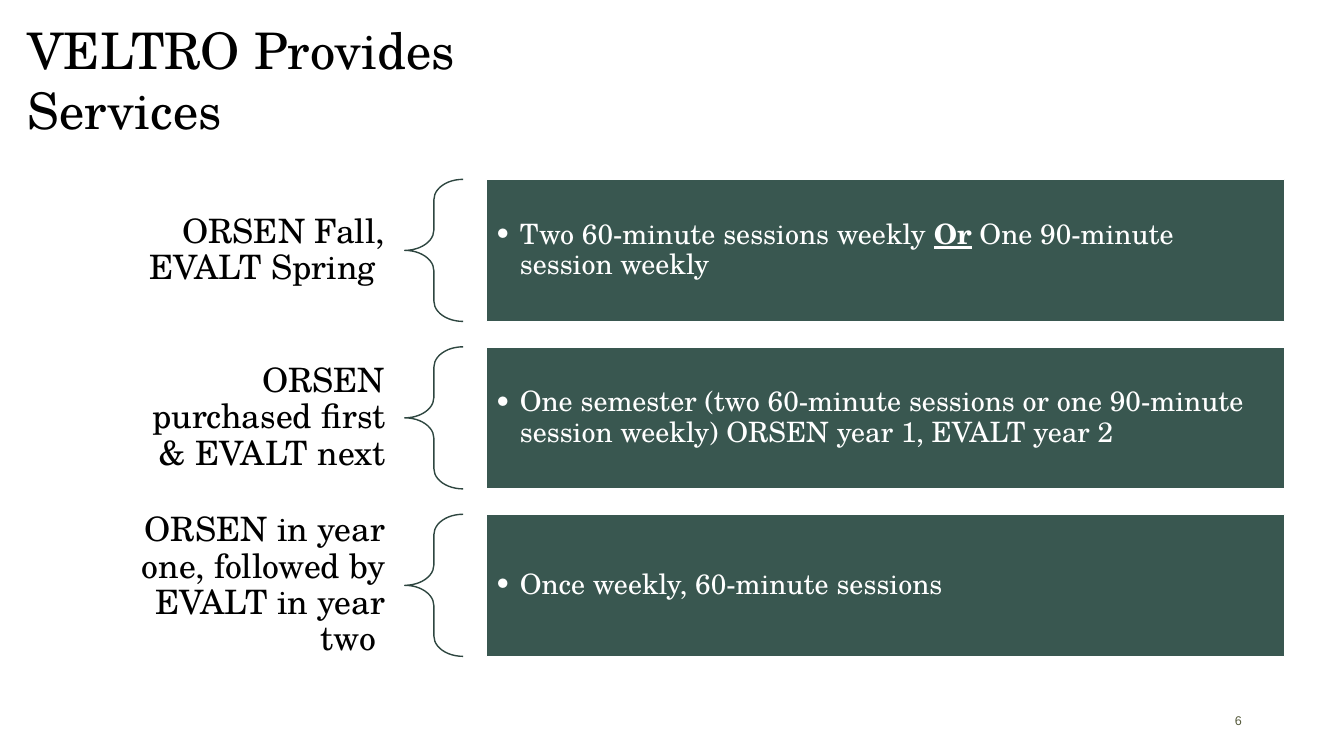
from dataclasses import dataclass

from lxml.etree import SubElement
from pptx import Presentation
from pptx.dml.color import RGBColor
from pptx.enum.shapes import MSO_SHAPE
from pptx.enum.text import MSO_ANCHOR, PP_ALIGN
from pptx.oxml.ns import qn
from pptx.util import Cm, Pt


@dataclass(frozen=True)
class Theme:
    font: str = "TeX Gyre Schola"
    number_font: str = "Arial"
    black: RGBColor = RGBColor(0x00, 0x00, 0x00)
    white: RGBColor = RGBColor(0xFF, 0xFF, 0xFF)
    panel: RGBColor = RGBColor(0x39, 0x57, 0x50)
    brace: RGBColor = RGBColor(0x2E, 0x46, 0x40)
    number: RGBColor = RGBColor(0x55, 0x5A, 0x3B)
    title_size: Pt = Pt(36)
    label_size: Pt = Pt(24)
    detail_size: Pt = Pt(20)
    number_size: Pt = Pt(9)


def format_runs(paragraph, size, color, font):
    for run in paragraph.runs:
        run.font.name = font
        run.font.size = size
        run.font.color.rgb = color


def add_text(slide, box, text, size, color, font, align=PP_ALIGN.LEFT, anchor=MSO_ANCHOR.TOP):
    shape = slide.shapes.add_textbox(*box)
    frame = shape.text_frame
    frame.word_wrap = True
    frame.vertical_anchor = anchor
    frame.text = text
    paragraph = frame.paragraphs[0]
    paragraph.alignment = align
    format_runs(paragraph, size, color, font)
    return frame


theme = Theme()
services = [
    ("ORSEN Fall, EVALT Spring ",
     ["Two 60-minute sessions weekly ", "Or", " One 90-minute session weekly"]),
    ("ORSEN purchased first & EVALT next",
     ["One semester (two 60-minute sessions or one 90-minute session weekly) "
      "ORSEN year 1, EVALT year 2"]),
    ("ORSEN in year one, followed by EVALT in year two ",
     ["Once weekly, 60-minute sessions "]),
]
first_top, row_step, row_height = Cm(4.52), Cm(4.22), Cm(3.58)

presentation = Presentation()
presentation.slide_width = Cm(33.87)
presentation.slide_height = Cm(19.05)
slide = presentation.slides.add_slide(presentation.slide_layouts[6])

add_text(slide, (Cm(0.44), Cm(0.35), Cm(13.77), Cm(3.33)), "VELTRO Provides Services",
         theme.title_size, theme.black, theme.font)

for row, (label, details) in enumerate(services):
    top = first_top + row * row_step

    label_frame = add_text(slide, (Cm(2.8), top, Cm(7.39), row_height), label,
                           theme.label_size, theme.black, theme.font,
                           PP_ALIGN.RIGHT, MSO_ANCHOR.MIDDLE)
    label_frame.margin_left = label_frame.margin_right = Cm(0.48)
    label_frame.margin_top = label_frame.margin_bottom = Cm(0.17)
    label_frame.paragraphs[0].line_spacing = 0.9

    brace = slide.shapes.add_shape(MSO_SHAPE.LEFT_BRACE, Cm(10.2), top, Cm(1.47), row_height)
    brace.shadow.inherit = False
    brace.adjustments[0] = 0.35
    brace.fill.background()
    brace.line.color.rgb = theme.brace
    brace.line.width = Pt(1)

    panel = slide.shapes.add_shape(MSO_SHAPE.RECTANGLE, Cm(12.26), top, Cm(20.12), row_height)
    panel.shadow.inherit = False
    panel.fill.solid()
    panel.fill.fore_color.rgb = theme.panel
    panel.line.color.rgb = theme.white
    panel.line.width = Pt(1)

    frame = panel.text_frame
    frame.word_wrap = True
    frame.vertical_anchor = MSO_ANCHOR.MIDDLE
    frame.margin_left = frame.margin_top = frame.margin_bottom = Cm(0.2)
    frame.margin_right = Cm(0.35)
    paragraph = frame.paragraphs[0]
    paragraph.alignment = PP_ALIGN.LEFT
    paragraph.line_spacing = 0.9
    for detail in details:
        run = paragraph.add_run()
        run.text = detail
        if detail == "Or":
            run.font.bold = True
            run.font.underline = True
    format_runs(paragraph, theme.detail_size, theme.white, theme.font)
    properties = paragraph._p.get_or_add_pPr()
    properties.set("marL", str(Cm(0.64)))
    properties.set("indent", str(-Cm(0.64)))
    SubElement(properties, qn("a:buFont")).set("typeface", theme.font)
    SubElement(properties, qn("a:buChar")).set("char", "•")

number_frame = add_text(slide, (Cm(23.93), Cm(17.65), Cm(7.62), Cm(1.02)), "6",
                        theme.number_size, theme.number, theme.number_font,
                        PP_ALIGN.RIGHT, MSO_ANCHOR.MIDDLE)
number_frame.paragraphs[0].runs[0]._r.get_or_add_rPr().set("spc", "150")

presentation.save("out.pptx")
